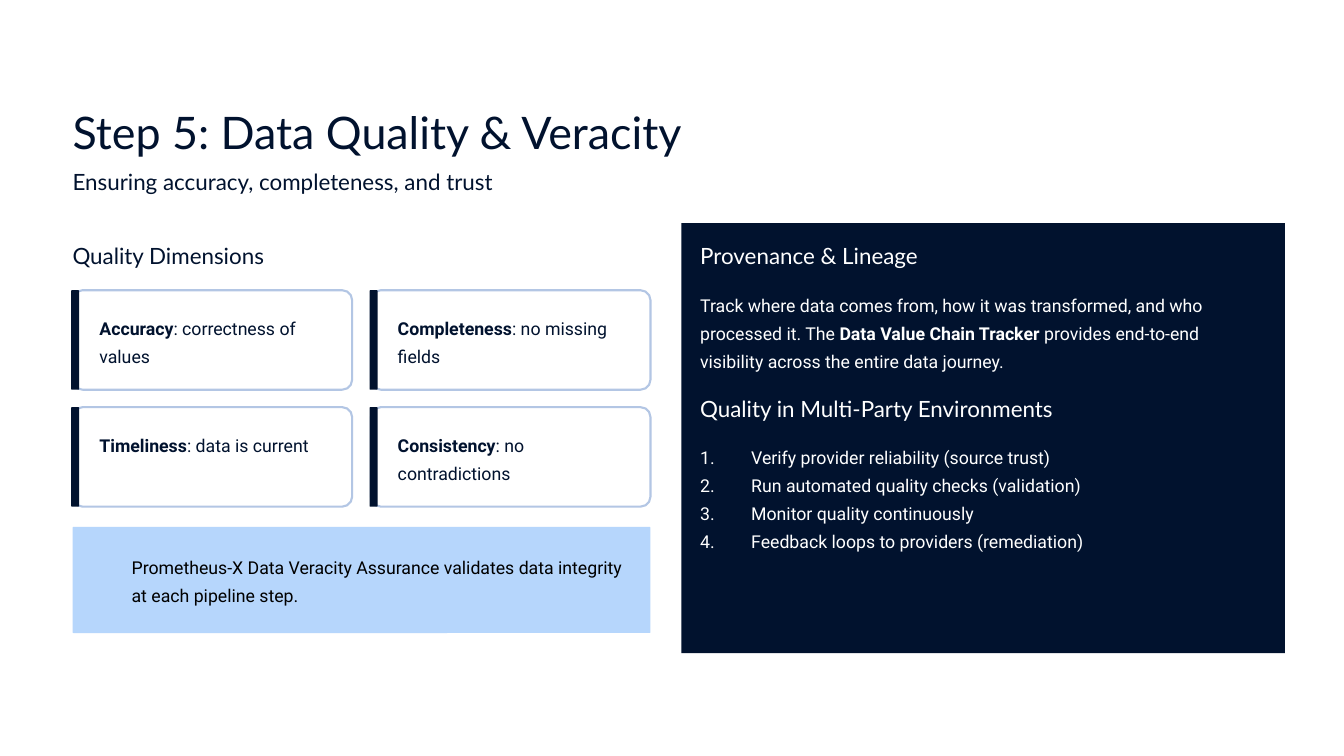
from itertools import product
from lxml.etree import SubElement
from pptx import Presentation
from pptx.dml.color import RGBColor
from pptx.enum.shapes import MSO_SHAPE
from pptx.oxml.ns import qn
from pptx.util import Inches, Pt

NAVY, WHITE, BLACK = "01122E", "FFFFFF", "000000"
EDGE, PALE = "B3C6E4", "B6D6FC"


def paint(target, color):
    target.solid()
    target.fore_color.rgb = RGBColor.from_string(color)


def panel(slide, box, fill, round=0.0, edge=None):
    shape = slide.shapes.add_shape(
        MSO_SHAPE.ROUNDED_RECTANGLE, *[Inches(n) for n in box])
    shape.shadow.inherit = False
    shape.adjustments[0] = round
    paint(shape.fill, fill)
    if edge:
        paint(shape.line.fill, edge)
        shape.line.width = Pt(1.12)
    else:
        shape.line.fill.background()


def number(para):
    props = para._p.get_or_add_pPr()
    props.set("marL", str(Inches(0.38)))
    props.set("indent", str(-Inches(0.38)))
    SubElement(props, qn("a:buAutoNum"), type="arabicPeriod")


def write(slide, box, text, size=9.5, font="Roboto", color=NAVY,
          space=1.33, wrap=True, list=False):
    frame = slide.shapes.add_textbox(*[Inches(n) for n in box]).text_frame
    frame.word_wrap = wrap
    frame.margin_left = frame.margin_right = 0
    frame.margin_top = frame.margin_bottom = 0
    for row, line in enumerate(text.split("\n")):
        para = frame.add_paragraph() if row else frame.paragraphs[0]
        if list:
            number(para)
        para.line_spacing = space
        for part, words in enumerate(line.split("**")):
            if not words:
                continue
            run = para.add_run()
            run.text = words
            run.font.size = Pt(size)
            run.font.name = font
            run.font.bold = part % 2 == 1
            paint(run.font.fill, color)


def heading(slide, box, text, size=12, color=NAVY):
    write(slide, box, text, size=size, font="Lato", color=color,
          space=1.04, wrap=False)


def header(slide, box):
    x, y, w, h = box
    heading(slide, (x, y, w, 0.42), "Step 5: Data Quality & Veracity", size=24)
    heading(slide, (x, y + 0.48, 3.97, 0.21),
            "Ensuring accuracy, completeness, and trust")


def card(slide, box, text):
    x, y, w, h = box
    panel(slide, box, WHITE, round=0.1, edge=EDGE)
    panel(slide, (x - 0.01, y, 0.06, h), NAVY, round=0.1)
    write(slide, (x + 0.2, y + 0.15, w - 0.35, h - 0.31), text)


def quality(slide, box):
    x, y, w, h = box
    heading(slide, (x, y, 2.2, 0.21), "Quality Dimensions")
    cards = ["**Accuracy**: correctness of values",
             "**Completeness**: no missing fields",
             "**Timeliness**: data is current",
             "**Consistency**: no contradictions"]
    wide, high, gap = 2.08, 0.74, 0.13
    for (row, col), text in zip(product(range(2), repeat=2), cards):
        card(slide, (x + col * (w - wide), y + 0.37 + row * (high + gap),
                     wide, high), text)
    panel(slide, (x, y + h - 0.79, w, 0.79), PALE, round=0.01)
    write(slide, (x + 0.44, y + h - 0.62, w - 0.57, 0.43),
          "Prometheus-X Data Veracity Assurance validates data integrity "
          "at each pipeline step.", color=BLACK)


def lineage(slide, box):
    x, y, w, h = box
    panel(slide, box, NAVY)
    left, wide = x + 0.14, w - 0.29
    heading(slide, (left, y + 0.13, 2.21, 0.21), "Provenance & Lineage",
            color=WHITE)
    write(slide, (left, y + 0.48, wide, 0.65),
          "Track where data comes from, how it was transformed, and who "
          "processed it. The **Data Value Chain Tracker** provides "
          "end-to-end visibility across the entire data journey.",
          color=WHITE)
    heading(slide, (left, y + 1.27, 3.34, 0.21),
            "Quality in Multi-Party Environments", color=WHITE)
    steps = ["Verify provider reliability (source trust)",
             "Run automated quality checks (validation)",
             "Monitor quality continuously",
             "Feedback loops to providers (remediation)"]
    write(slide, (left, y + 1.61, wide, 1.01), "\n".join(steps),
          color=WHITE, list=True)


def main():
    deck = Presentation()
    deck.slide_width = Inches(10)
    deck.slide_height = Inches(10 * 9 / 16)
    slide = deck.slides.add_slide(deck.slide_layouts[6])
    paint(slide.background.fill, WHITE)
    header(slide, (0.54, 0.76, 5.42, 0.69))
    quality(slide, (0.54, 1.79, 4.3, 2.92))
    lineage(slide, (5.07, 1.66, 4.49, 3.2))
    deck.save("out.pptx")


if __name__ == "__main__":
    main()
